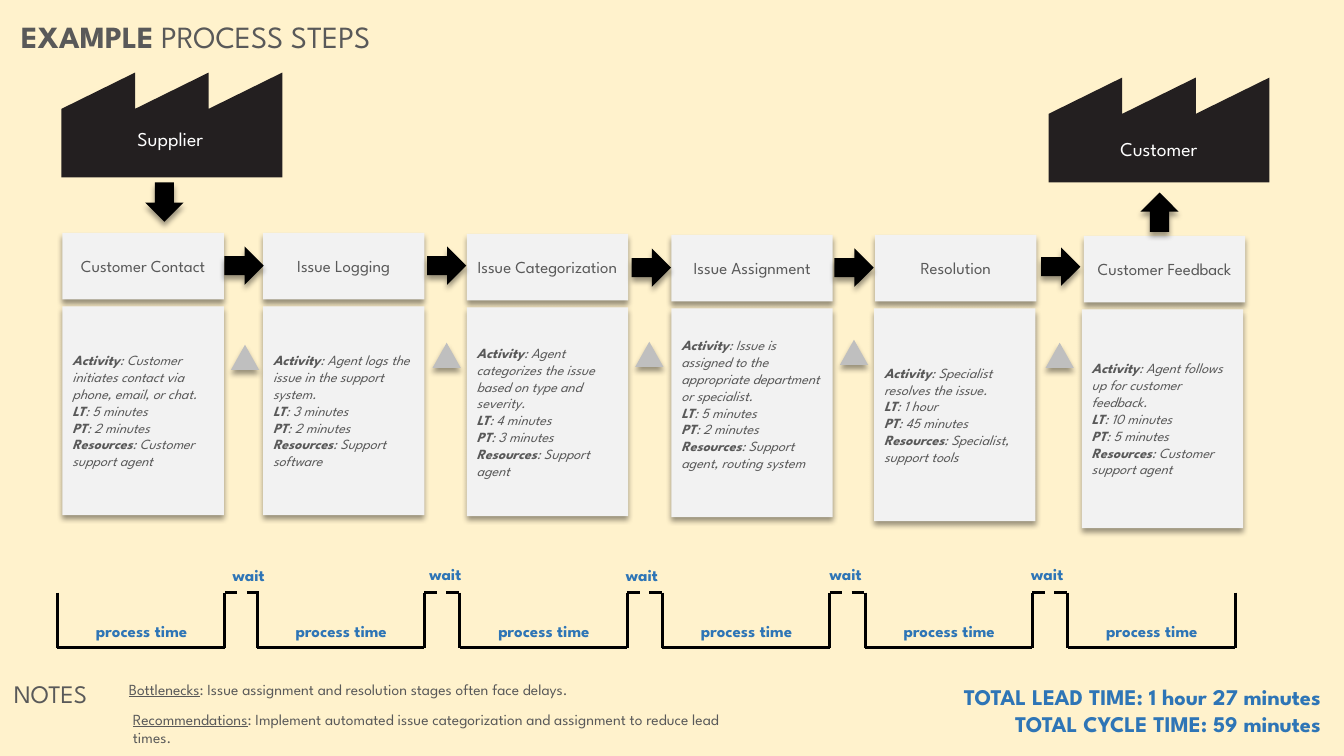
import pptx
import pptx.util
import pptx.dml.color
import pptx.enum.dml
import pptx.enum.shapes
import pptx.enum.text
import pptx.oxml
import pptx.oxml.ns
import pptx.oxml.xmlchemy
from pptx.util import Inches

FONT = "League Spartan"
COLORS = {
    "cream": "FFF2CC", "black": "000000", "factory": "231F20", "card": "F2F2F2",
    "triangle": "BFBFBF", "gray": "595959", "blue": "2E75B6", "white": "FFFFFF",
}
SHAPES = pptx.enum.shapes.MSO_SHAPE
ALIGN = pptx.enum.text.PP_ALIGN
ANCHOR = pptx.enum.text.MSO_ANCHOR

CARD_WIDTH, HEADER_HEIGHT, DETAIL_DROP = 1.6, 0.66, 0.73
RAIL_TOP, RAIL_BOTTOM, RAIL_WIDTH, WAIT_WIDTH = 5.88, 6.42, 1.66, 0.43

# Step: header left, header top, detail left, detail height, name, activity, LT, PT, resources
STEPS = [
    (0.62, 2.31, 0.62, 2.07, "Customer Contact",
     "Customer initiates contact via phone, email, or chat.",
     "5 minutes", "2 minutes", "Customer support agent"),
    (2.61, 2.31, 2.61, 2.07, "Issue Logging",
     "Agent logs the issue in the support system.",
     "3 minutes", "2 minutes", "Support software"),
    (4.63, 2.32, 4.63, 2.07, "Issue Categorization",
     "Agent categorizes the issue based on type and severity.",
     "4 minutes", "3 minutes", "Support agent"),
    (6.66, 2.33, 6.66, 2.07, "Issue Assignment",
     "Issue is assigned to the appropriate department or specialist.",
     "5 minutes", "2 minutes", "Support agent, routing system"),
    (8.68, 2.33, 8.67, 2.11, "Resolution",
     "Specialist resolves the issue.",
     "1 hour", "45 minutes", "Specialist, support tools"),
    (10.75, 2.34, 10.73, 2.17, "Customer Feedback",
     "Agent follows up for customer feedback.",
     "10 minutes", "5 minutes", "Customer support agent"),
]
RAISED_DETAIL = "Issue Assignment"
# Arrow between steps: left, top; triangle: left, top; wait label: left, top
GAPS = [
    (2.23, 2.44, 2.29, 3.42, 2.21, 5.57),
    (4.24, 2.44, 4.29, 3.40, 4.16, 5.56),
    (6.27, 2.46, 6.30, 3.39, 6.11, 5.57),
    (8.28, 2.46, 8.33, 3.37, 8.13, 5.56),
    (10.33, 2.45, 10.37, 3.40, 10.13, 5.56),
]
RAIL_LEFTS = [0.57] + [2.55 + 2.01 * step for step in range(5)]


def color(name):
    return pptx.dml.color.RGBColor.from_string(COLORS[name])


def write(box, paragraphs, *, size, ink="gray", align=ALIGN.LEFT, anchor=ANCHOR.MIDDLE,
          bold=False, italic=False):
    """Each paragraph is a list of (text, mark) spans; mark is "", "b" or "u"."""
    frame = box.text_frame
    frame.word_wrap = True
    frame.auto_size = pptx.enum.text.MSO_AUTO_SIZE.NONE
    frame.vertical_anchor = anchor
    for index, spans in enumerate(paragraphs):
        para = frame.paragraphs[0] if index == 0 else frame.add_paragraph()
        para.alignment = align
        for text, mark in spans:
            span = para.add_run()
            span.text = text
            font = span.font
            font.name, font.size = FONT, pptx.util.Pt(size)
            font.color.rgb = color(ink)
            font.bold = bold or mark == "b"
            font.italic = italic
            font.underline = mark == "u"


def add_label(shapes, place, paragraphs, **style):
    box = shapes.add_textbox(*map(Inches, place))
    write(box, paragraphs, **style)


def add_solid(page, kind, place, fill, rotation=0):
    """Filled preset shape with a soft shadow below it."""
    shape = page.shapes.add_shape(kind, *map(Inches, place))
    shape.rotation = rotation
    shape.fill.solid()
    shape.fill.fore_color.rgb = color(fill)
    shape.line.fill.background()
    shape.shadow.inherit = False
    effects = shape._element.spPr.find(pptx.oxml.ns.qn("a:effectLst"))
    effects.append(pptx.oxml.parse_xml(
        f'<a:outerShdw {pptx.oxml.ns.nsdecls("a")} blurRad="50800" dist="38100" '
        'dir="5400000" algn="t" rotWithShape="0"><a:srgbClr val="000000">'
        '<a:alpha val="40000"/></a:srgbClr></a:outerShdw>'))
    return shape


def add_arrow(page, left, top, rotation=0):
    add_solid(page, SHAPES.DOWN_ARROW, (left, top, 0.38, 0.39), "black", rotation)


def add_line(shapes, start, end, dashed=False):
    line = shapes.add_connector(pptx.enum.shapes.MSO_CONNECTOR.STRAIGHT,
                                *map(Inches, start + end))
    line.line.color.rgb = color("black")
    line.line.width = pptx.util.Pt(2.25)
    if dashed:
        line.line.dash_style = pptx.enum.dml.MSO_LINE.DASH
    line._element.spPr.append(pptx.oxml.xmlchemy.OxmlElement("a:effectLst"))


def add_factory(page, left, top, name, label_place):
    tooth, roof, height = 0.73, 0.36, 1.04
    outline = [(0, roof)]
    for count in range(1, 4):
        outline += [(count * tooth, 0), (count * tooth, roof)]
    outline += [(3 * tooth, height), (0, height)]
    points = [(Inches(left + x), Inches(top + y)) for x, y in outline]
    builder = page.shapes.build_freeform(*points[0])
    builder.add_line_segments(points[1:], close=True)
    factory = builder.convert_to_shape()
    factory.fill.solid()
    factory.fill.fore_color.rgb = color("factory")
    factory.line.fill.background()
    factory.shadow.inherit = False
    add_label(page.shapes, label_place, [[(name, "")]], size=14, ink="white",
              align=ALIGN.CENTER)


def add_step(page, left, top, detail_left, detail_height, name, *facts):
    header = add_solid(page, SHAPES.RECTANGLE, (left, top, CARD_WIDTH, HEADER_HEIGHT), "card")
    write(header, [[(name, "")]], size=12, align=ALIGN.CENTER)
    detail = add_solid(page, SHAPES.RECTANGLE,
                       (detail_left, top + DETAIL_DROP, CARD_WIDTH, detail_height), "card")
    labels = ("Activity", "LT", "PT", "Resources")
    write(detail, [[(label, "b"), (": " + fact, "")] for label, fact in zip(labels, facts)],
          size=10, italic=True)
    if name == RAISED_DETAIL:
        detail.text_frame.margin_bottom = Inches(0.22)


def add_process_time(page, left):
    right = left + RAIL_WIDTH
    shapes = page.shapes.add_group_shape().shapes
    add_line(shapes, (left, RAIL_BOTTOM), (right, RAIL_BOTTOM))
    add_label(shapes, (left + 0.11, 6.13, 1.45, 0.25), [[("process time", "")]],
              size=12, ink="blue", bold=True, align=ALIGN.CENTER)
    for side in (left, right):
        add_line(shapes, (side, RAIL_TOP), (side, RAIL_BOTTOM + 0.01))


def main():
    deck = pptx.Presentation()
    deck.slide_width, deck.slide_height = Inches(13.33), Inches(7.5)
    page = deck.slides.add_slide(deck.slide_layouts[5])
    page.background.fill.solid()
    page.background.fill.fore_color.rgb = color("cream")

    # Title
    title = page.shapes.title
    title.left, title.top, title.width, title.height = map(Inches, (0.11, 0.09, 6.39, 0.54))
    write(title, [[("EXAMPLE", "b"), (" PROCESS STEPS", "")]], size=22)

    # Supplier and customer
    add_factory(page, 0.61, 0.72, "Supplier", (0.58, 1.11, 2.22, 0.54))
    add_factory(page, 10.4, 0.77, "Customer", (10.4, 1.2, 2.19, 0.54))

    # Process steps and the flow between them
    add_arrow(page, 1.44, 1.81)
    for step in STEPS:
        add_step(page, *step)
    for arrow_left, arrow_top, triangle_left, triangle_top, wait_left, wait_top in GAPS:
        add_arrow(page, arrow_left, arrow_top, 270)
        add_solid(page, SHAPES.ISOSCELES_TRIANGLE,
                  (triangle_left, triangle_top, 0.28, 0.25), "triangle")
        add_label(page.shapes, (wait_left, wait_top, 0.56, 0.26), [[("wait", "")]],
                  size=12, ink="blue", bold=True)
    add_arrow(page, 11.31, 1.91, 180)

    # Timeline
    for left in RAIL_LEFTS:
        add_process_time(page, left)
    for left in RAIL_LEFTS[:-1]:
        start = left + RAIL_WIDTH
        add_line(page.shapes, (start, RAIL_TOP), (start + WAIT_WIDTH, RAIL_TOP), dashed=True)

    # Totals and notes
    add_label(page.shapes, (7.6, 6.66, 5.6, 0.77),
              [[("TOTAL LEAD TIME: 1 hour 27 minutes", "")],
               [("TOTAL CYCLE TIME: 59 minutes", "")]],
              size=16, ink="blue", bold=True, align=ALIGN.RIGHT)
    add_label(page.shapes, (0.04, 6.68, 1.1, 0.4), [[("NOTES", "")]], size=18,
              anchor=ANCHOR.TOP)
    add_label(page.shapes, (1.18, 6.69, 5.4, 0.29),
              [[("Bottlenecks", "u"),
                (": Issue assignment and resolution stages often face delays.", "")]], size=11)
    add_label(page.shapes, (1.22, 7.03, 6.43, 0.39),
              [[("Recommendations", "u"),
                (": Implement automated issue categorization and assignment "
                 "to reduce lead times.", "")]], size=11)

    deck.save("out.pptx")


if __name__ == "__main__":
    main()
